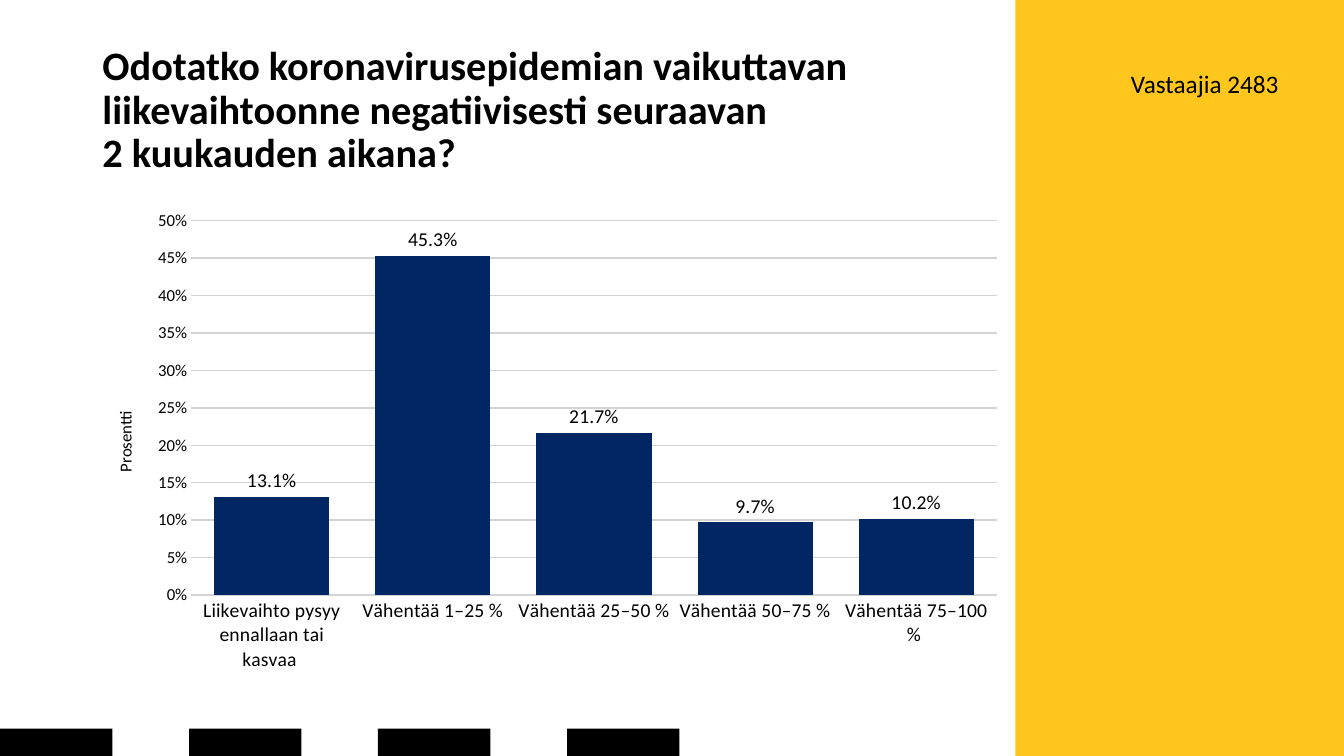
from typing import NamedTuple

from lxml.etree import SubElement
from pptx import Presentation
from pptx.chart.chart import Chart
from pptx.chart.data import CategoryChartData
from pptx.dml.color import RGBColor
from pptx.enum.chart import XL_CHART_TYPE, XL_LABEL_POSITION, XL_TICK_MARK
from pptx.enum.shapes import MSO_SHAPE
from pptx.enum.text import MSO_ANCHOR, MSO_AUTO_SIZE, PP_ALIGN
from pptx.oxml import parse_xml
from pptx.oxml.ns import nsdecls, qn
from pptx.slide import Slide
from pptx.text.text import Font
from pptx.util import Emu, Pt

FONT = "Calibri"
YELLOW = RGBColor(0xFF, 0xC6, 0x1E)
NAVY = RGBColor(0x00, 0x26, 0x63)
BLACK = RGBColor(0x00, 0x00, 0x00)
GRID_GREY = RGBColor(0xD3, 0xD3, 0xD3)
EMU_PER_PX = 9525


class Box(NamedTuple):
    left: int
    top: int
    width: int
    height: int

    def emu(self) -> tuple[Emu, ...]:
        return tuple(Emu(length * EMU_PER_PX) for length in self)


class Block(NamedTuple):
    box: Box
    color: RGBColor


class Answer(NamedTuple):
    label: str
    share: float


SIDE_PANEL = Block(Box(967, 0, 313, 720), YELLOW)
FOOTER_BLOCKS = [Block(Box(180 * step, 694, 107, 26), BLACK) for step in range(4)]
TITLE_BOX = Box(88, 38, 975, 136)
RESPONDENTS_BOX = Box(1028, 60, 199, 38)
CHART_BOX = Box(88, 192, 880, 457)

ANSWERS = [
    Answer("Liikevaihto pysyy ennallaan tai kasvaa ", 0.131),
    Answer("Vähentää 1–25 %", 0.453),
    Answer("Vähentää 25–50 % ", 0.217),
    Answer("Vähentää 50–75 %", 0.097),
    Answer("Vähentää 75–100 % ", 0.102),
]


def style_font(font: Font, size: float, bold: bool = False) -> None:
    font.name = FONT
    font.size = Pt(size)
    font.bold = bold
    font.color.rgb = BLACK


def add_block(page: Slide, block: Block) -> None:
    shape = page.shapes.add_shape(MSO_SHAPE.RECTANGLE, *block.box.emu())
    shape.shadow.inherit = False
    shape.fill.solid()
    shape.fill.fore_color.rgb = block.color
    shape.line.fill.background()


def fill_title(page: Slide) -> None:
    title = page.shapes.title
    title.left, title.top, title.width, title.height = TITLE_BOX.emu()
    frame = title.text_frame
    frame.word_wrap = True
    frame.auto_size = MSO_AUTO_SIZE.NONE
    frame.vertical_anchor = MSO_ANCHOR.MIDDLE
    para = frame.paragraphs[0]
    para.text = (
        "Odotatko koronavirusepidemian vaikuttavan liikevaihtoonne "
        "negatiivisesti seuraavan \v2 kuukauden aikana?"
    )
    para.alignment = PP_ALIGN.LEFT
    para.line_spacing = 0.9
    style_font(para.font, 28.8, bold=True)


def add_respondents(page: Slide) -> None:
    frame = page.shapes.add_textbox(*RESPONDENTS_BOX.emu()).text_frame
    frame.word_wrap = True
    frame.auto_size = MSO_AUTO_SIZE.SHAPE_TO_FIT_TEXT
    para = frame.paragraphs[0]
    para.text = "Vastaajia 2483"
    para.alignment = PP_ALIGN.RIGHT
    style_font(para.font, 18)


def place_in_chart(parent, settings: dict[str, str]) -> None:
    """Give a chart part a manual layout, in fractions of the chart."""
    layout = parent.find(qn("c:layout"))
    if layout is None:
        layout = parse_xml(f"<c:layout {nsdecls('c')}/>")
        parent.insert(0, layout)
    manual = SubElement(layout, qn("c:manualLayout"))
    for name, value in settings.items():
        SubElement(manual, qn(f"c:{name}")).set("val", value)


def style_axes(chart: Chart) -> None:
    for axis, size in ((chart.category_axis, 14), (chart.value_axis, 12)):
        axis.major_tick_mark = XL_TICK_MARK.INSIDE
        axis.minor_tick_mark = XL_TICK_MARK.NONE
        axis.format.line.fill.background()
        style_font(axis.tick_labels.font, size)

    values = chart.value_axis
    values.minimum_scale, values.maximum_scale, values.major_unit = 0, 0.5, 0.05
    values.tick_labels.number_format = "0%"
    values.tick_labels.number_format_is_linked = False
    values.has_major_gridlines = True
    values.major_gridlines.format.line.color.rgb = GRID_GREY
    values.major_gridlines.format.line.width = Pt(1)

    para = values.axis_title.text_frame.paragraphs[0]
    para.text = "Prosentti"
    style_font(para.font, 12)
    place_in_chart(
        values.axis_title._element,
        {"xMode": "edge", "yMode": "edge", "x": "0.02", "y": "0.43"},
    )


def add_answer_chart(page: Slide) -> None:
    data = CategoryChartData(number_format="0.0%")
    data.categories = [answer.label for answer in ANSWERS]
    data.add_series("Series 1", [answer.share for answer in ANSWERS])
    chart = page.shapes.add_chart(
        XL_CHART_TYPE.COLUMN_CLUSTERED, *CHART_BOX.emu(), data
    ).chart
    chart.has_legend = False
    chart.has_title = False
    style_font(chart.font, 11)
    style_axes(chart)

    # Columns and their labels
    plot = chart.plots[0]
    plot.gap_width = 40
    plot.vary_by_categories = False
    series = plot.series[0]
    series.format.fill.solid()
    series.format.fill.fore_color.rgb = NAVY
    labels = series.data_labels
    labels.show_value = True
    labels.position = XL_LABEL_POSITION.OUTSIDE_END
    labels.number_format = "0.0%"
    labels.number_format_is_linked = False
    style_font(labels.font, 14)

    # Plot area inside the axes
    place_in_chart(
        chart._chartSpace.chart.plotArea,
        {
            "layoutTarget": "inner", "xMode": "edge", "yMode": "edge",
            "x": "0.107", "y": "0.04", "w": "0.872", "h": "0.78",
        },
    )


def main() -> None:
    deck = Presentation()
    deck.slide_width, deck.slide_height = Box(0, 0, 1280, 720).emu()[2:]
    page = deck.slides.add_slide(deck.slide_layouts[5])

    # Background decoration
    for block in [SIDE_PANEL, *FOOTER_BLOCKS]:
        add_block(page, block)

    # Content
    fill_title(page)
    add_respondents(page)
    add_answer_chart(page)
    deck.save("out.pptx")


if __name__ == "__main__":
    main()
